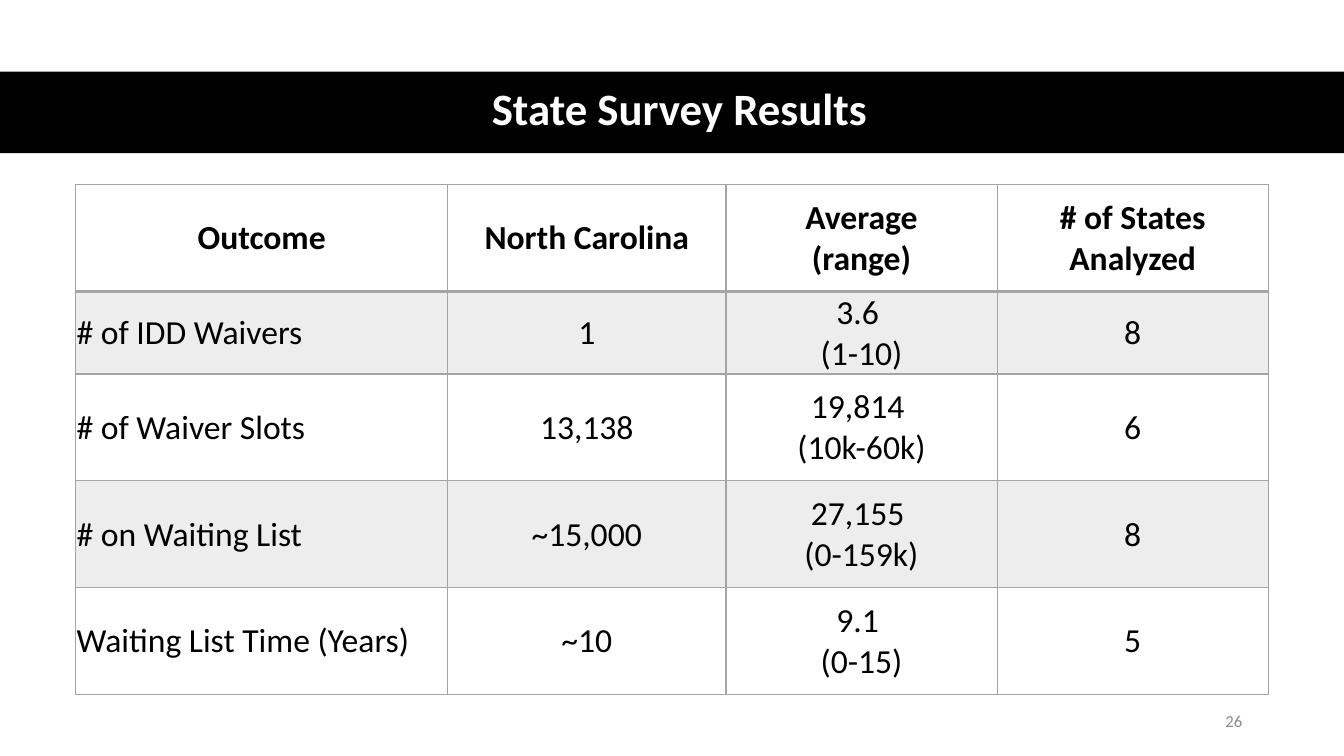
from dataclasses import dataclass

from lxml.etree import SubElement
from pptx import Presentation
from pptx.dml.color import RGBColor as Rgb
from pptx.enum.shapes import MSO_SHAPE as Kind
from pptx.enum.text import MSO_ANCHOR as Anchor, PP_ALIGN as Align
from pptx.oxml import parse_xml
from pptx.oxml.ns import nsdecls, qn
from pptx.slide import Slide
from pptx.table import _Cell as Cell
from pptx.text.text import TextFrame as Frame
from pptx.util import Inches, Pt


@dataclass(frozen=True)
class Theme:
    font: str = "Calibri"
    black: str = "000000"
    white: str = "FFFFFF"
    gray: str = "A5A5A5"
    dim: str = "8C8C8C"
    title: int = 32
    body: int = 24
    small: int = 12
    tint: int = 20
    thin: int = 1
    thick: int = 2


@dataclass(frozen=True)
class Label:
    text: str
    box: tuple[float, float, float, float]
    size: int
    color: str
    align: Align
    bold: bool = False
    lead: float = 1.0


THEME = Theme()
LABELS = (
    Label("State Survey Results", (0.61, 0.7, 12.26, 0.81), THEME.title,
          THEME.white, Align.CENTER, True, 0.9),
    Label("26", (9.42, 6.95, 3, 0.4), THEME.small, THEME.dim, Align.RIGHT),
)
ROWS = (
    ("Outcome", "North Carolina", "Average\n(range)", "# of States Analyzed"),
    ("# of IDD Waivers", "1", "3.6 \n(1-10)", "8"),
    ("# of Waiver Slots", "13,138", "19,814 \n(10k-60k)", "6"),
    ("# on Waiting List", "~15,000", "27,155 \n(0-159k)", "8"),
    ("Waiting List Time (Years)", "~10", "9.1 \n(0-15)", "5"),
)
WIDTHS = (3.69, 2.76, 2.69, 2.69)
HEIGHTS = (1.06, 0.82, 1.06, 1.06, 1.06)
INSET = {"margin_left": Inches(0.01), "margin_top": Inches(0.01),
         "margin_right": Inches(0.01), "margin_bottom": 0,
         "vertical_anchor": Anchor.MIDDLE}


def apply(item: object, values: dict) -> None:
    for name, value in values.items():
        setattr(item, name, value)


def write(frame: Frame, text: str, size: int, color: str, bold: bool,
          para: dict) -> None:
    """Fill the frame, one paragraph for each line of text."""
    frame.text = text
    for line in frame.paragraphs:
        apply(line, para)
        for run in line.runs:
            apply(run.font, {"name": THEME.font, "size": Pt(size), "bold": bold})
            run.font.color.rgb = Rgb.from_string(color)


def add_bar(slide: Slide) -> None:
    bar = slide.shapes.add_shape(
        Kind.RECTANGLE, 0, Inches(0.71), Inches(13.33), Inches(0.81))
    bar.shadow.inherit = False
    bar.fill.solid()
    bar.fill.fore_color.rgb = Rgb.from_string(THEME.black)
    bar.line.fill.background()


def add_label(slide: Slide, label: Label) -> None:
    frame = slide.shapes.add_textbox(*map(Inches, label.box)).text_frame
    apply(frame, {"word_wrap": True, "vertical_anchor": Anchor.MIDDLE})
    write(frame, label.text, label.size, label.color, label.bold,
          {"alignment": label.align, "line_spacing": label.lead,
           "space_after": Pt(6)})


def shade(cell: Cell, band: bool) -> None:
    """Tint a banded cell and leave the others clear."""
    if not band:
        cell.fill.background()
        return
    cell.fill.solid()
    cell.fill.fore_color.rgb = Rgb.from_string(THEME.gray)
    color = cell.fill._xPr.find(qn("a:solidFill"))[0]
    SubElement(color, qn("a:alpha"), val=str(THEME.tint * 1000))


def edge(cell: Cell, row: int) -> None:
    """Draw the four borders, thick between the header and the body."""
    thick = {0: "B", 1: "T"}.get(row)
    props = cell._tc.get_or_add_tcPr()
    for spot, side in enumerate("LRTB"):
        width = Pt(THEME.thick if side == thick else THEME.thin)
        props.insert(spot, parse_xml(
            f'<a:ln{side} {nsdecls("a")} w="{width}"><a:solidFill>'
            f'<a:srgbClr val="{THEME.gray}"/></a:solidFill></a:ln{side}>'))


def add_grid(slide: Slide) -> None:
    grid = slide.shapes.add_table(
        len(ROWS), len(WIDTHS), Inches(0.75), Inches(1.83),
        Inches(sum(WIDTHS)), Inches(sum(HEIGHTS))).table
    apply(grid, {"first_row": False, "horz_banding": False})
    for col, width in zip(grid.columns, WIDTHS):
        col.width = Inches(width)
    for row, height in zip(grid.rows, HEIGHTS):
        row.height = Inches(height)
    for r, texts in enumerate(ROWS):
        for c, text in enumerate(texts):
            cell = grid.cell(r, c)
            head = r == 0
            align = Align.CENTER if head or c else Align.LEFT
            apply(cell, INSET)
            write(cell.text_frame, text, THEME.body, THEME.black, head,
                  {"alignment": align})
            shade(cell, r % 2 == 1)
            edge(cell, r)


def main() -> None:
    deck = Presentation()
    apply(deck, {"slide_width": Inches(13.33), "slide_height": Inches(7.5)})
    slide = deck.slides.add_slide(deck.slide_layouts[6])
    add_bar(slide)
    for label in LABELS:
        add_label(slide, label)
    add_grid(slide)
    deck.save("out.pptx")


if __name__ == "__main__":
    main()
